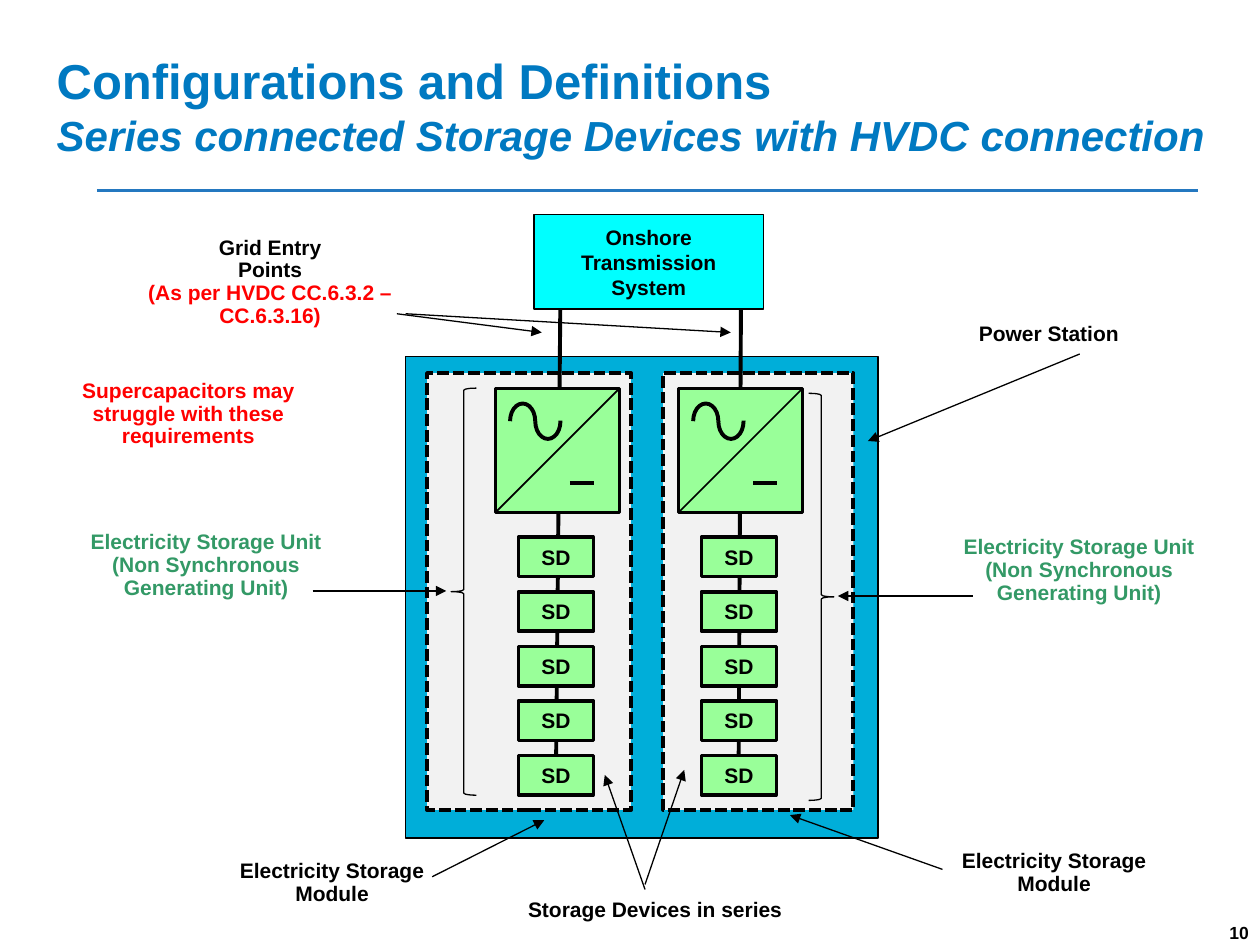
"""Build the slide on series connected storage devices with an HVDC connection."""
from lxml import etree
from pptx import Presentation
from pptx.dml.color import RGBColor
from pptx.enum import dml, shapes, text
from pptx.oxml import ns
from pptx.util import Pt

BLACK = RGBColor(0, 0, 0)
RED = RGBColor(0xFF, 0, 0)
GREEN = RGBColor(0x33, 0x99, 0x66)
TITLE_BLUE = RGBColor(0x00, 0x79, 0xC1)
RULE_BLUE = RGBColor(0x24, 0x78, 0xC0)
STATION_BLUE = RGBColor(0x00, 0xAE, 0xD9)
MODULE_GREY = RGBColor(0xF2, 0xF2, 0xF2)
DEVICE_GREEN = RGBColor(0x99, 0xFF, 0x99)
CYAN = RGBColor(0, 0xFF, 0xFF)

CONVERTER_SIZE = 70.8
DEVICE_COUNT, DEVICE_TOP, DEVICE_PITCH = 5, 307, 31.15


def set_font(font, size, color, italic=None):
    """Apply the bold slide font."""
    font.name, font.size, font.bold, font.italic = "Arial", Pt(size), True, italic
    font.color.rgb = color


def add_title(slide, heading, subtitle):
    """Fill and place the title placeholder."""
    title = slide.shapes.title
    title.left, title.top, title.width, title.height = Pt(25.2), Pt(25.2), Pt(690.5), Pt(70.6)
    frame = title.text_frame
    frame.text = f"{heading}\n{subtitle}"
    frame.vertical_anchor = text.MSO_ANCHOR.TOP
    frame.auto_size = text.MSO_AUTO_SIZE.NONE
    for paragraph, size, italic in zip(frame.paragraphs, (28, 24), (False, True)):
        paragraph.alignment = text.PP_ALIGN.LEFT
        set_font(paragraph.font, size, TITLE_BLUE, italic)


def add_label(slide, left, top, width, height, *lines):
    """Add a centred caption from (text, colour) lines."""
    frame = slide.shapes.add_textbox(Pt(left), Pt(top), Pt(width), Pt(height)).text_frame
    frame.word_wrap = True
    frame.margin_left = frame.margin_right = frame.margin_top = frame.margin_bottom = 0
    for index, (words, color) in enumerate(lines):
        paragraph = frame.add_paragraph() if index else frame.paragraphs[0]
        paragraph.text = words
        paragraph.alignment = text.PP_ALIGN.CENTER
        paragraph.line_spacing = 0.9
        set_font(paragraph.font, 12, color)


def add_page_number(slide, number):
    """Add the page number in the bottom right corner."""
    frame = slide.shapes.add_textbox(Pt(681.8), Pt(523.4), Pt(38.9), Pt(17.3)).text_frame
    paragraph = frame.paragraphs[0]
    paragraph.text = number
    paragraph.alignment = text.PP_ALIGN.RIGHT
    set_font(paragraph.font, 10, BLACK)
    frame.word_wrap = True


def add_outline(slide, kind, left, top, width, height, weight, adjustments=(), flip=None):
    """Add an unfilled black preset shape, optionally flipped."""
    shape = slide.shapes.add_shape(kind, Pt(left), Pt(top), Pt(width), Pt(height))
    shape.shadow.inherit = False
    shape.fill.background()
    shape.line.color.rgb = BLACK
    shape.line.width = Pt(weight)
    for index, value in enumerate(adjustments):
        shape.adjustments[index] = value
    if flip:
        shape._element.spPr.find(ns.qn("a:xfrm")).set(flip, "1")
    return shape


def add_box(slide, left, top, width, height, fill, weight, words="", dashed=False):
    """Add a filled rectangle with an optional centred caption."""
    box = add_outline(slide, shapes.MSO_SHAPE.RECTANGLE, left, top, width, height, weight)
    box.fill.solid()
    box.fill.fore_color.rgb = fill
    if dashed:
        box.line.dash_style = dml.MSO_LINE.SQUARE_DOT
    if words:
        box.text_frame.text = words
        box.text_frame.vertical_anchor = text.MSO_ANCHOR.MIDDLE
        for paragraph in box.text_frame.paragraphs:
            paragraph.alignment = text.PP_ALIGN.CENTER
            set_font(paragraph.font, 12, BLACK)


def add_line(slide, x1, y1, x2, y2, weight=0.75, color=BLACK, arrow=False):
    """Add a straight line, with an arrowhead at its end if asked."""
    line = slide.shapes.add_connector(
        shapes.MSO_CONNECTOR.STRAIGHT, Pt(x1), Pt(y1), Pt(x2), Pt(y2))
    line.line.color.rgb = color
    line.line.width = Pt(weight)
    if arrow:
        etree.SubElement(line.line._get_or_add_ln(), ns.qn("a:tailEnd"), type="triangle")
    etree.SubElement(line._element.spPr, ns.qn("a:effectLst"))


def add_converter(slide, left, top):
    """Add an AC/DC converter symbol."""
    add_box(slide, left, top, CONVERTER_SIZE, CONVERTER_SIZE, DEVICE_GREEN, 2)
    add_line(slide, left + CONVERTER_SIZE, top, left, top + CONVERTER_SIZE, 1)
    add_line(slide, left + 42.5, top + 54, left + 56.5, top + 54, 2.25)
    for offset, flip in ((8.3, None), (22.7, "flipV")):
        add_outline(slide, shapes.MSO_SHAPE.ARC, left + offset, top + 8.6, 14.4, 20.2,
                    2.25, (108.095, 1.438), flip)


def add_storage_unit(slide, left, wire_top_x, wire_bottom_x):
    """Add a wire with a converter and its storage devices in series."""
    add_line(slide, wire_top_x, 176.4, wire_bottom_x, 454.3, 2.25)
    add_converter(slide, left, 222)
    for row in range(DEVICE_COUNT):
        add_box(slide, left + 13.1, DEVICE_TOP + row * DEVICE_PITCH, 42.8, 22.6,
                DEVICE_GREEN, 2, "SD")


def main():
    """Build and save the slide."""
    presentation = Presentation()
    presentation.slide_width, presentation.slide_height = Pt(720), Pt(540)
    slide = presentation.slides.add_slide(presentation.slide_layouts[5])
    add_title(slide, "Configurations and Definitions",
              "Series connected Storage Devices with HVDC connection")
    add_line(slide, 55.4, 108.7, 684.7, 108.7, 1.5, RULE_BLUE)
    add_page_number(slide, "10")

    add_box(slide, 231.6, 203.7, 270.2, 275.2, STATION_BLUE, 0.75)
    for left, width in ((244, 116.6), (379, 108.7)):
        add_box(slide, left, 213.2, width, 249.6, MODULE_GREY, 2.25, dashed=True)
    add_storage_unit(slide, 283.2, 320.2, 317.6)
    add_storage_unit(slide, 387.8, 423.4, 422)
    add_box(slide, 305.2, 122.6, 131.2, 54, CYAN, 1, "Onshore\nTransmission\vSystem")
    for left, top, flip in ((257.8, 221.8, None), (462.2, 224.8, "flipH")):
        add_outline(slide, shapes.MSO_SHAPE.LEFT_BRACE, left, top, 14.4, 232.6,
                    0.75, (0.083, 0.5), flip)

    add_label(slide, 82, 135.4, 144.7, 65.5, ("Grid Entry", BLACK), ("Points", BLACK),
              ("(As per HVDC CC.6.3.2 – CC.6.3.16)", RED))
    add_label(slide, 35.3, 217.4, 144.7, 45.4,
              ("Supercapacitors may struggle with these requirements", RED))
    for left, top in ((45.4, 303.8), (544.3, 306.7)):
        add_label(slide, left, top, 144.7, 43.2, ("Electricity Storage Unit", GREEN),
                  ("(Non Synchronous Generating Unit)", GREEN))
    for left, top in ((117.4, 491.8), (530, 486)):
        add_label(slide, left, top, 144.7, 26.6, ("Electricity Storage Module", BLACK))
    add_label(slide, 527, 185, 144.7, 15.1, ("Power Station", BLACK))
    add_label(slide, 292.3, 514, 164.2, 25.9, ("Storage Devices in series", BLACK))

    arrows = (
        (226.8, 179.3, 309.6, 190), (231.8, 179.3, 417.6, 190),
        (617, 202.3, 496, 252), (178.6, 337.7, 255, 337.7),
        (555.8, 340.6, 478.8, 340.6), (247, 501, 311, 468.7),
        (538.6, 496.8, 451.4, 465.8), (368.6, 505.4, 391, 440),
        (368.6, 508.3, 345.6, 442.8),
    )
    for ends in arrows:
        add_line(slide, *ends, arrow=True)
    presentation.save("out.pptx")


if __name__ == "__main__":
    main()
